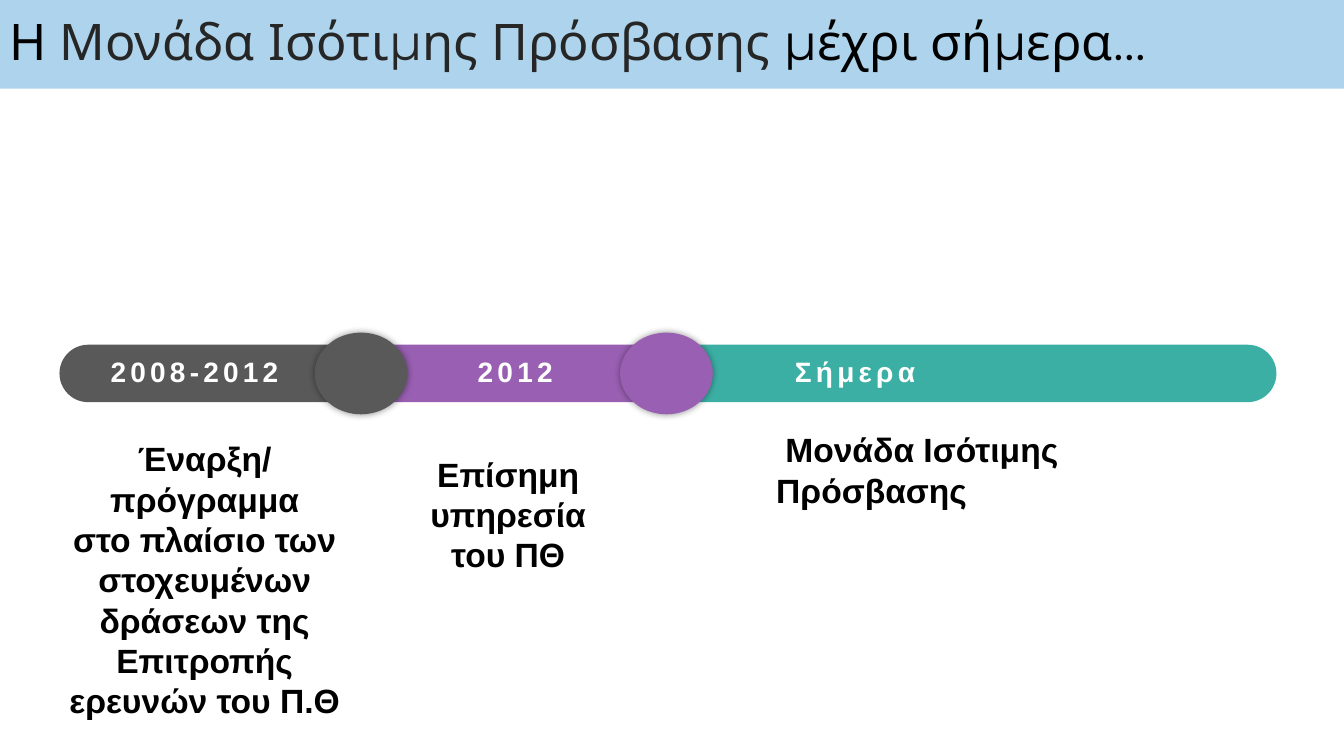
from dataclasses import dataclass

import pptx
import pptx.dml.color
import pptx.enum.shapes
import pptx.enum.text
import pptx.oxml
import pptx.oxml.ns
import pptx.util
from pptx.util import Inches

SHAPE = pptx.enum.shapes.MSO_SHAPE
ALIGN = pptx.enum.text.PP_ALIGN
ANCHOR = pptx.enum.text.MSO_ANCHOR


@dataclass(frozen=True)
class Theme:
    band: str = "ADD4EC"
    start: str = "595959"
    service: str = "995FB2"
    today: str = "3CAFA4"
    ink: str = "000000"
    soft_ink: str = "262626"
    light: str = "FFFFFF"
    title_font: str = "Montserrat"
    body_font: str = "Arial"
    title_size: int = 36
    period_size: int = 20
    caption_size: int = 24


THEME = Theme()
BAR_TOP, BAR_HEIGHT = 3.42, 0.57
KNOB_TOP, KNOB_WIDTH, KNOB_HEIGHT = 3.3, 0.92, 0.81
PERIOD_TOP, PERIOD_HEIGHT = 3.47, 0.49


def rgb(color):
    return pptx.dml.color.RGBColor.from_string(color)


def add_run(paragraph, text, font, size, color, bold=False):
    run = paragraph.add_run()
    run.text = text
    run.font.name = font
    run.font.size = pptx.util.Pt(size)
    run.font.color.rgb = rgb(color)
    run.font.bold = bold
    return run


def add_title(slide, pieces):
    title = slide.shapes.title
    title.left, title.top = Inches(-0.01), Inches(0)
    title.width, title.height = Inches(13.34), Inches(0.88)
    title.fill.solid()
    title.fill.fore_color.rgb = rgb(THEME.band)
    frame = title.text_frame
    frame.auto_size = pptx.enum.text.MSO_AUTO_SIZE.NONE
    frame.vertical_anchor = ANCHOR.MIDDLE
    paragraph = frame.paragraphs[0]
    paragraph.alignment = ALIGN.LEFT
    paragraph.line_spacing = 0.9
    for text, color in pieces:
        add_run(paragraph, text, THEME.title_font, THEME.title_size, color)


def add_solid(slide, preset, left, top, width, height, color):
    solid = slide.shapes.add_shape(
        preset, Inches(left), Inches(top), Inches(width), Inches(height))
    solid.shadow.inherit = False
    solid.fill.solid()
    solid.fill.fore_color.rgb = rgb(color)
    solid.line.fill.background()
    return solid


def add_bar(slide, left, width, color):
    bar = add_solid(slide, SHAPE.ROUNDED_RECTANGLE, left, BAR_TOP, width, BAR_HEIGHT, color)
    bar.adjustments[0] = 0.5


def add_knob(slide, left, color):
    knob = add_solid(slide, SHAPE.OVAL, left, KNOB_TOP, KNOB_WIDTH, KNOB_HEIGHT, color)
    effects = knob.element.spPr.find(pptx.oxml.ns.qn("a:effectLst"))
    effects.append(pptx.oxml.parse_xml(
        f'<a:outerShdw {pptx.oxml.ns.nsdecls("a")} blurRad="63500" dist="0" '
        'algn="ctr" rotWithShape="0"><a:srgbClr val="000000">'
        '<a:alpha val="40000"/></a:srgbClr></a:outerShdw>'))


def add_text_frame(slide, left, top, width, height):
    box = slide.shapes.add_textbox(Inches(left), Inches(top), Inches(width), Inches(height))
    box.text_frame.word_wrap = True
    return box.text_frame


def add_period(slide, left, width, text):
    frame = add_text_frame(slide, left, PERIOD_TOP, width, PERIOD_HEIGHT)
    frame.vertical_anchor = ANCHOR.TOP
    paragraph = frame.paragraphs[0]
    paragraph.alignment = ALIGN.CENTER
    run = add_run(paragraph, text, THEME.body_font, THEME.period_size, THEME.light, True)
    run.font._element.set("spc", "300")


def add_caption(slide, left, top, width, height, lines, alignment=ALIGN.CENTER, indent=0):
    frame = add_text_frame(slide, left, top, width, height)
    for index, line in enumerate(lines):
        paragraph = frame.paragraphs[0] if index == 0 else frame.add_paragraph()
        paragraph.alignment = alignment
        if indent:
            paragraph._p.get_or_add_pPr().set("indent", str(Inches(indent)))
        add_run(paragraph, line, THEME.body_font, THEME.caption_size, THEME.ink, True)


def main():
    deck = pptx.Presentation()
    deck.slide_width, deck.slide_height = Inches(13.33), Inches(7.5)
    slide = deck.slides.add_slide(deck.slide_layouts[5])

    add_title(slide, [
        ("Η ", THEME.ink),
        ("Μονάδα Ισότιμης Πρόσβασης ", THEME.soft_ink),
        ("μέχρι σήμερα…", THEME.ink),
    ])

    for left, width, color in [
        (0.59, 2.97, THEME.start),
        (3.6, 2.97, THEME.service),
        (6.65, 6.01, THEME.today),
    ]:
        add_bar(slide, left, width, color)
    for left, color in [(3.12, THEME.start), (6.15, THEME.service)]:
        add_knob(slide, left, color)
    for left, width, period in [
        (0.71, 2.44, "2008-2012"),
        (4.35, 1.52, "2012"),
        (7.39, 2.18, "Σήμερα"),
    ]:
        add_period(slide, left, width, period)

    add_caption(slide, 0.56, 4.3, 2.94, 2.93, [
        "Έναρξη/ πρόγραμμα",
        "στο πλαίσιο των στοχευμένων δράσεων της Επιτροπής ερευνών του Π.Θ",
    ])
    add_caption(slide, 4.04, 4.45, 2, 1.31, ["Επίσημη υπηρεσία του ΠΘ"])
    add_caption(slide, 7.6, 4.21, 4.09, 0.91, ["Μονάδα Ισότιμης Πρόσβασης"],
                ALIGN.LEFT, 0.09)

    deck.save("out.pptx")


if __name__ == "__main__":
    main()
